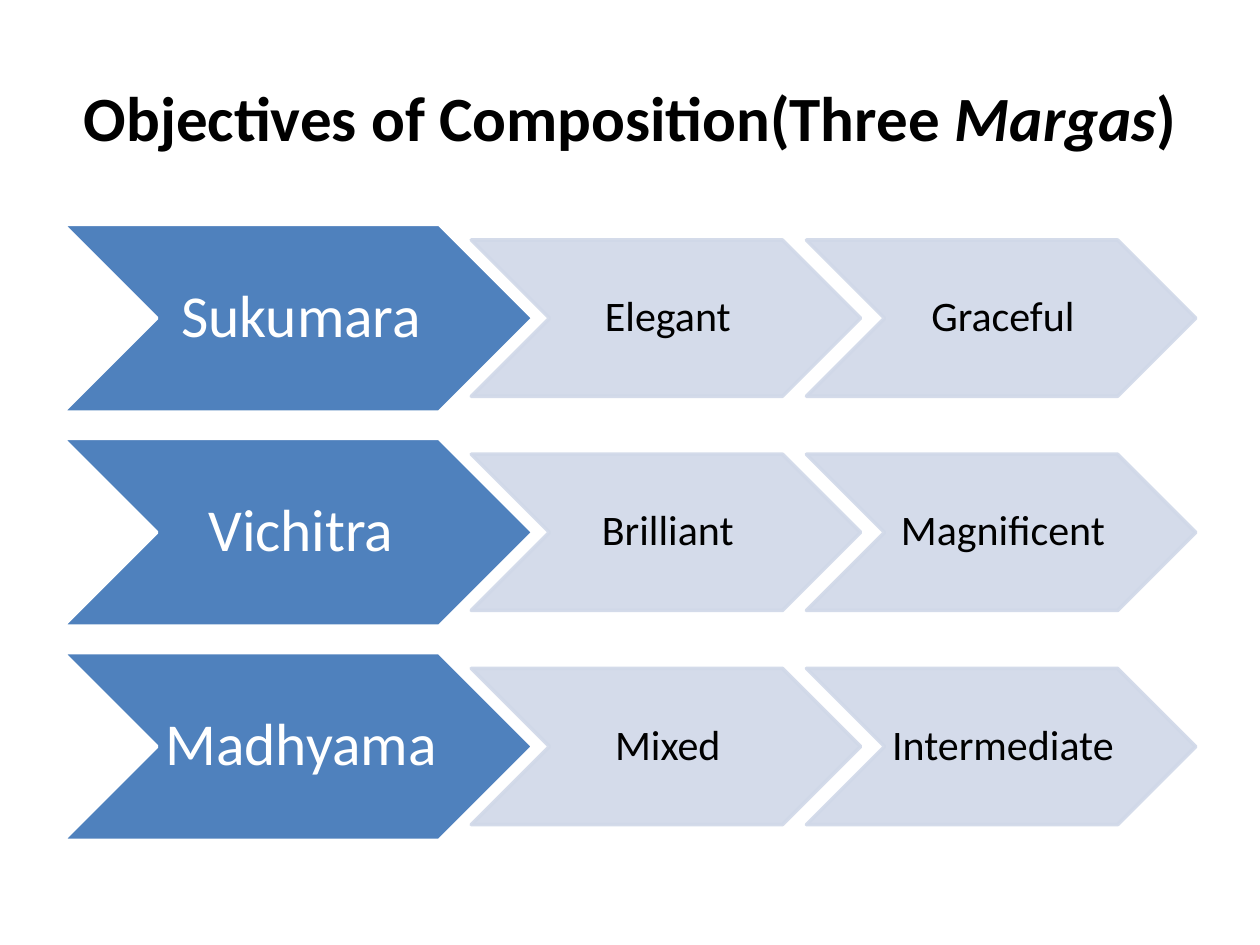
from dataclasses import dataclass
from lxml.etree import SubElement
from pptx import Presentation
from pptx.dml.color import RGBColor as RGB
from pptx.enum.shapes import MSO_SHAPE as Shape
from pptx.enum.text import MSO_ANCHOR as Anchor, PP_ALIGN as Align
from pptx.oxml.ns import qn
from pptx.util import Inches, Pt


@dataclass(frozen=True)
class Theme:
    font: str = "Calibri"
    ink: RGB = RGB(0x00, 0x00, 0x00)
    paper: RGB = RGB(0xFF, 0xFF, 0xFF)
    marga: RGB = RGB(0x4F, 0x81, 0xBD)
    quality: RGB = RGB(0xD0, 0xD8, 0xE8)
    quality_alpha: int = 90
    title_size: int = 36
    marga_size: int = 34
    quality_size: int = 24


class SlideBuilder:
    def __init__(self, slide, theme):
        self.slide = slide
        self.theme = theme

    def add_run(self, paragraph, words, size, color, bold=False, italic=False):
        run = paragraph.add_run()
        run.text = words
        font = run.font
        font.name, font.size = self.theme.font, Pt(size)
        font.bold, font.italic = bold, italic
        font.color.rgb = color

    def title(self, left, top, width, height, pieces):
        heading = self.slide.shapes.add_textbox(
            Inches(left), Inches(top), Inches(width), Inches(height))
        frame = heading.text_frame
        frame.word_wrap = True
        frame.vertical_anchor = Anchor.MIDDLE
        paragraph = frame.paragraphs[0]
        paragraph.alignment = Align.CENTER
        for words, italic in pieces:
            self.add_run(paragraph, words, self.theme.title_size,
                         self.theme.ink, bold=True, italic=italic)

    def chevron(self, left, top, width, height, words, size, color,
                fill, outline, inset, alpha=100):
        step = self.slide.shapes.add_shape(
            Shape.CHEVRON, Inches(left), Inches(top), Inches(width), Inches(height))
        step.shadow.inherit = False
        step.line.width = Pt(2)
        step.fill.solid()
        step.line.fill.solid()
        for paint, shade in ((step.fill, fill), (step.line.fill, outline)):
            paint.fore_color.rgb = shade
        if alpha < 100:
            for shade in step._element.spPr.iter(qn("a:srgbClr")):
                SubElement(shade, qn("a:alpha"), val=str(alpha * 1000))
        frame = step.text_frame
        frame.word_wrap = False
        frame.vertical_anchor = Anchor.MIDDLE
        frame.margin_left, frame.margin_right = Inches(inset), Inches(0)
        frame.margin_top = frame.margin_bottom = Inches(0.02)
        paragraph = frame.paragraphs[0]
        paragraph.alignment = Align.CENTER
        paragraph.line_spacing = 0.9
        self.add_run(paragraph, words, size, color)

    def marga(self, left, top, width, height, name):
        theme = self.theme
        self.chevron(left, top, width, height, name, theme.marga_size,
                     theme.paper, theme.marga, theme.paper, 0.05)

    def quality(self, left, top, width, height, name):
        theme = self.theme
        self.chevron(left, top, width, height, name, theme.quality_size,
                     theme.ink, theme.quality, theme.quality, 0.03,
                     theme.quality_alpha)


MARGAS = {
    "Sukumara": ("Elegant", "Graceful"),
    "Vichitra": ("Brilliant", "Magnificent"),
    "Madhyama": ("Mixed", "Intermediate"),
}
FIRST_TOP, ROW_PITCH = 1.78, 1.7
MARGA_LEFT, MARGA_WIDTH, MARGA_HEIGHT = 0.5, 3.73, 1.49
QUALITY_LEFT, QUALITY_PITCH = 3.74, 2.66
QUALITY_WIDTH, QUALITY_HEIGHT = 3.09, 1.24


def main():
    deck = Presentation()
    deck.slide_width, deck.slide_height = Inches(10), Inches(7.5)
    builder = SlideBuilder(deck.slides.add_slide(deck.slide_layouts[6]), Theme())
    builder.title(0.5, 0.3, 9, 1.25, [
        ("Objectives of Composition(Three ", False), ("Margas", True), (")", False)])
    for row, (marga, qualities) in enumerate(MARGAS.items()):
        top = FIRST_TOP + row * ROW_PITCH
        builder.marga(MARGA_LEFT, top, MARGA_WIDTH, MARGA_HEIGHT, marga)
        quality_top = top + (MARGA_HEIGHT - QUALITY_HEIGHT) / 2
        for column, quality in enumerate(qualities):
            builder.quality(QUALITY_LEFT + column * QUALITY_PITCH, quality_top,
                            QUALITY_WIDTH, QUALITY_HEIGHT, quality)
    deck.save("out.pptx")


if __name__ == "__main__":
    main()
